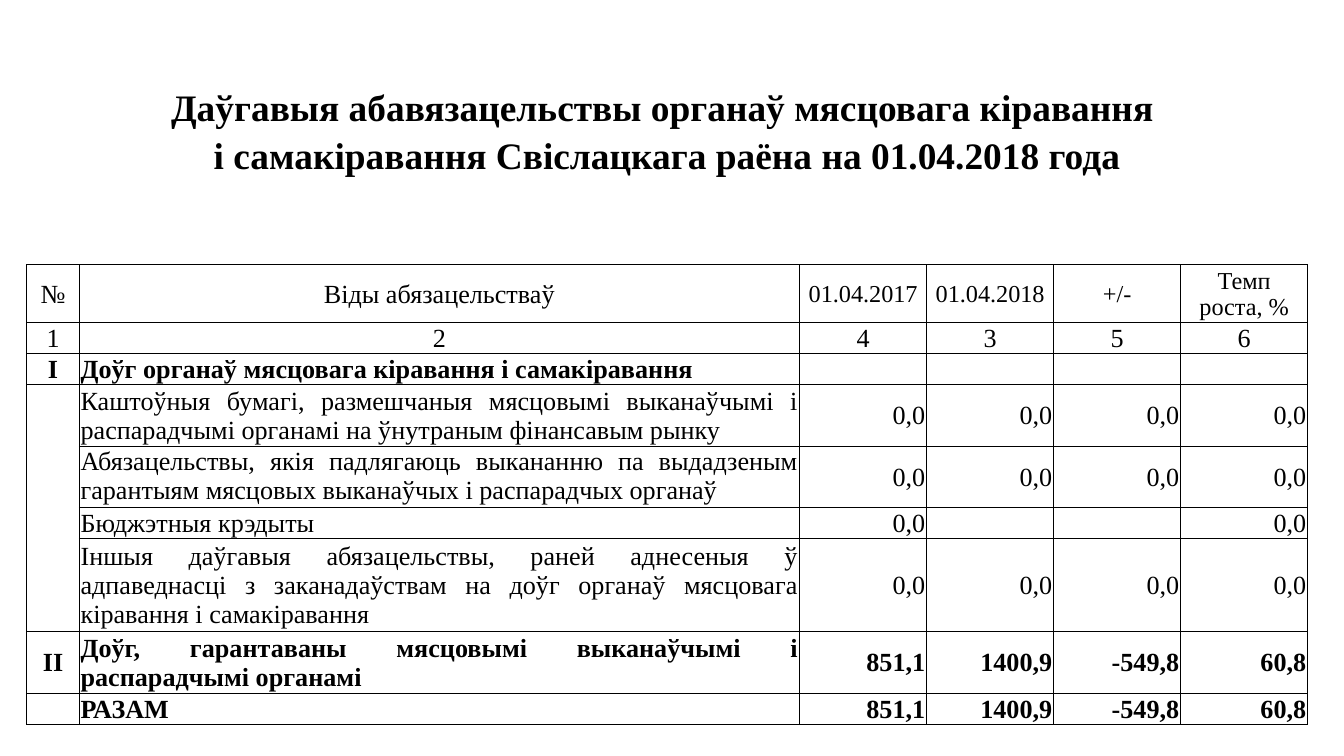
from lxml.etree import SubElement
from pptx import Presentation
from pptx.dml.color import RGBColor
from pptx.enum.text import MSO_ANCHOR, PP_ALIGN
from pptx.oxml import parse_xml
from pptx.oxml.ns import nsdecls, qn
from pptx.util import Inches, Pt

BLACK = RGBColor(0x00, 0x00, 0x00)
WHITE = RGBColor(0xFF, 0xFF, 0xFF)
FONT = "Times New Roman"

TABLE_WIDTH, NUMBER_WIDTH, NAME_WIDTH = 9.53, 0.39, 5.36
VALUE_WIDTH = (TABLE_WIDTH - NUMBER_WIDTH - NAME_WIDTH) / 4
COL_WIDTHS = [NUMBER_WIDTH, NAME_WIDTH] + [VALUE_WIDTH] * 4
ROW_HEIGHTS = [0.39, 0.72, 0.38, 0.27, 0.43, 0.23, 0.23, 0.46, 0.46, 0.23, 0.69, 0.46, 0.23]
TITLE_ROW, HEADER_ROW, NUMBER_ROW, FIRST_DEBT_ROW = 1, 4, 5, 6
GROUP_FIRST, GROUP_LAST = 7, 10  # rows sharing one open cell in the first column

TITLE = ("Даўгавыя абавязацельствы органаў мясцовага кіравання \n"
         "і самакіравання Свіслацкага раёна на 01.04.2018 года")
ZEROS = ["0,0"] * 4
TOTALS = ["851,1", "1400,9", "-549,8", "60,8"]
ROWS = [
    ["№", "Віды абязацельстваў", "01.04.2017", "01.04.2018", "+/-", "Темп\nроста, %"],
    ["1", "2", "4", "3", "5", "6"],
    ["I", "Доўг органаў мясцовага кіравання і самакіравання", "", "", "", ""],
    ["", "Каштоўныя бумагі, размешчаныя мясцовымі выканаўчымі і распарадчымі "
         "органамі на ўнутраным фінансавым рынку", *ZEROS],
    ["", "Абязацельствы, якія падлягаюць выкананню па выдадзеным гарантыям "
         "мясцовых выканаўчых і распарадчых органаў", *ZEROS],
    ["", "Бюджэтныя крэдыты", "0,0", "", "", "0,0"],
    ["", "Іншыя даўгавыя абязацельствы, раней аднесеныя ў адпаведнасці з "
         "заканадаўствам на доўг органаў мясцовага кіравання і самакіравання", *ZEROS],
    ["II", "Доўг, гарантаваны мясцовымі выканаўчымі і распарадчымі органамі", *TOTALS],
    ["", "РАЗАМ", *TOTALS],
]


def write_cell(cell, text, size=14, bold=False, align=PP_ALIGN.CENTER,
               anchor=MSO_ANCHOR.MIDDLE, spacing=None, fill=None):
    cell.margin_left = cell.margin_right = cell.margin_top = Inches(0.01)
    cell.margin_bottom = 0
    cell.vertical_anchor = anchor
    if fill is None:
        cell.fill.background()
    else:
        cell.fill.solid()
        cell.fill.fore_color.rgb = fill
    tf = cell.text_frame
    for i, line in enumerate(text.split("\n")):
        p = tf.add_paragraph() if i else tf.paragraphs[0]
        p.alignment = align
        if spacing:
            p.line_spacing = spacing
        if line:
            r = p.add_run()
            r.text = line
            r.font.name = FONT
            r.font.size = Pt(size)
            r.font.bold = bold
            r.font.color.rgb = BLACK
        else:
            SubElement(p._p, qn("a:endParaRPr"), sz="1000")


def set_borders(cell, sides):
    """Draw thin black lines on the given sides (of "LRTB") and none on the others."""
    tcPr = cell._tc.get_or_add_tcPr()
    for i, side in enumerate("LRTB"):
        paint = f'<a:solidFill><a:srgbClr val="{BLACK}"/></a:solidFill>' if side in sides else "<a:noFill/>"
        tcPr.insert(i, parse_xml(f'<a:ln{side} {nsdecls("a")} w="{Pt(0.5)}">{paint}</a:ln{side}>'))


prs = Presentation()
prs.slide_width = Inches(10)
prs.slide_height = prs.slide_width * 9 // 16
s = prs.slides.add_slide(prs.slide_layouts[6])

table = s.shapes.add_table(len(ROW_HEIGHTS), len(COL_WIDTHS), Inches(0.2), Inches(0.21),
                           Inches(TABLE_WIDTH), Inches(sum(ROW_HEIGHTS))).table
table.first_row = table.horz_banding = False
for col, width in zip(table.columns, COL_WIDTHS):
    col.width = Inches(width)
for row, height in zip(table.rows, ROW_HEIGHTS):
    row.height = Inches(height)

# Full-width rows above the grid
for i in range(HEADER_ROW):
    last = i == HEADER_ROW - 1
    for cell in table.rows[i].cells:
        set_borders(cell, "B" if last else "")
    cell = table.cell(i, 0)
    cell.merge(table.cell(i, len(COL_WIDTHS) - 1))
    if i == TITLE_ROW:
        write_cell(cell, TITLE, size=20, bold=True, anchor=MSO_ANCHOR.BOTTOM, spacing=1.15)
    else:
        write_cell(cell, "", fill=WHITE if i == TITLE_ROW + 1 else None)

# Debt grid
for i, texts in enumerate(ROWS, HEADER_ROW):
    for j, text in enumerate(texts):
        cell = table.cell(i, j)
        debt = i >= FIRST_DEBT_ROW
        in_group = GROUP_FIRST <= i <= GROUP_LAST
        align, anchor = PP_ALIGN.CENTER, MSO_ANCHOR.MIDDLE
        if debt and j == 1:
            align = PP_ALIGN.LEFT if text == "РАЗАМ" else PP_ALIGN.JUSTIFY
        elif debt and j > 1:
            align = PP_ALIGN.RIGHT
        if i == NUMBER_ROW:
            anchor = MSO_ANCHOR.BOTTOM
        elif text.startswith("Абязацельствы"):
            anchor = MSO_ANCHOR.TOP
        write_cell(cell, text, size=13 if i == HEADER_ROW and j > 1 else 14,
                   bold=debt and not in_group, align=align, anchor=anchor,
                   fill=WHITE if debt and j > 1 else None)
        sides = "LRTB"
        if in_group and j == 0:
            sides = "LR" + "T" * (i == GROUP_FIRST) + "B" * (i == GROUP_LAST)
        set_borders(cell, sides)

prs.save("out.pptx")
